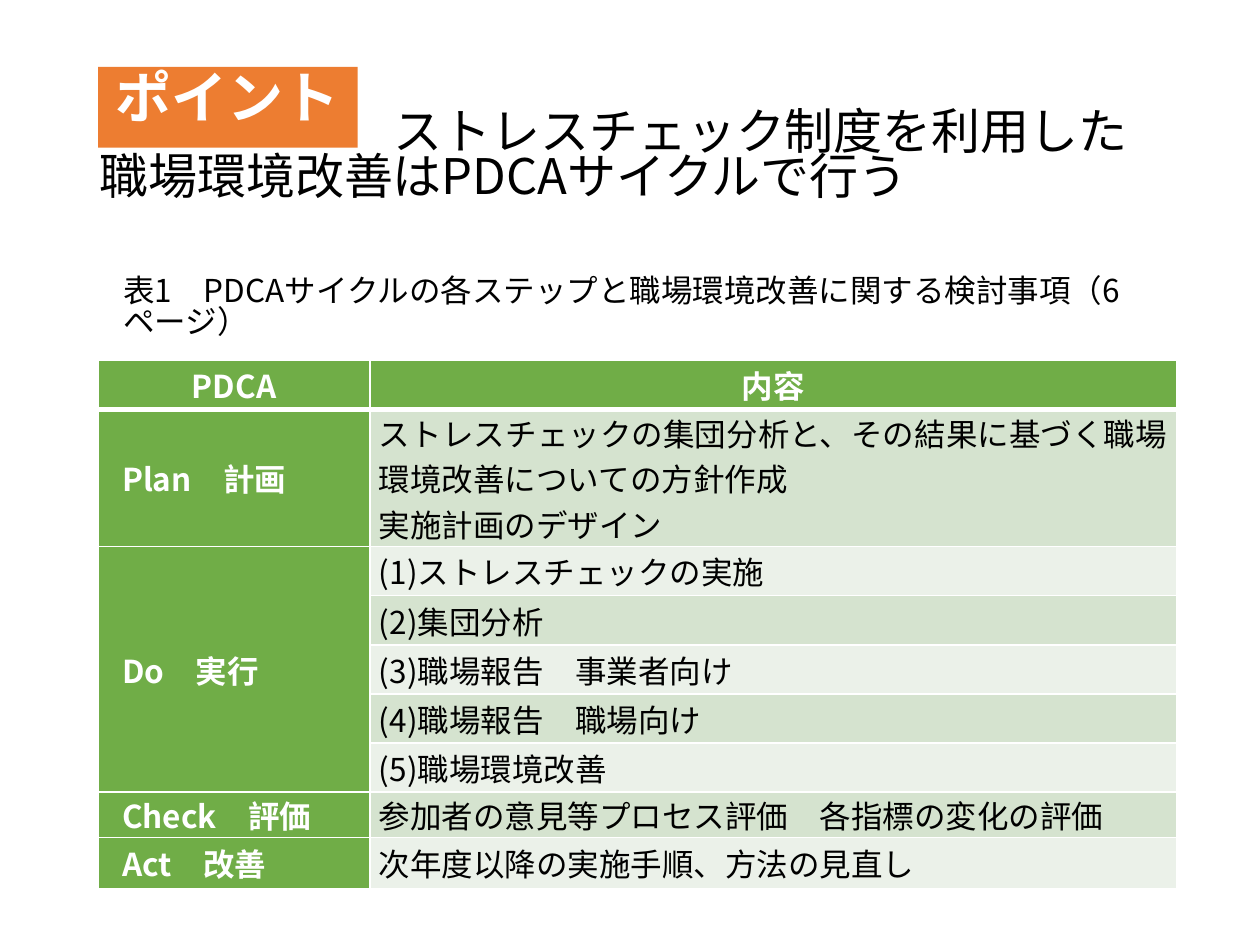
from dataclasses import dataclass

from lxml import etree
from pptx import Presentation
from pptx.dml.color import RGBColor
from pptx.enum.shapes import MSO_SHAPE
from pptx.enum.text import MSO_ANCHOR, MSO_AUTO_SIZE, PP_ALIGN
from pptx.oxml.ns import qn
from pptx.util import Cm, Pt

LEFT, CENTER, JUSTIFY = PP_ALIGN.LEFT, PP_ALIGN.CENTER, PP_ALIGN.JUSTIFY
TOP, MIDDLE = MSO_ANCHOR.TOP, MSO_ANCHOR.MIDDLE
TITLE_ONLY = 5
FONT = "Noto Sans CJK JP"
BLACK, WHITE, GREEN, ORANGE = "000000", "FFFFFF", "70AD47", "ED7D31"
BANDS = ("EBF1E9", "D5E3CF")
COLUMN_WIDTHS = (5.48, 16.26)
BORDERS = {"a:lnL": 1, "a:lnR": 1, "a:lnT": 1, "a:lnB": 1}
HEADER_BORDERS = {**BORDERS, "a:lnB": 3}


@dataclass(frozen=True)
class TextStyle:
    size: float
    color: str = BLACK
    bold: bool = False
    alignment: PP_ALIGN = LEFT
    indent: float = 0
    line_spacing: float = 1


@dataclass(frozen=True)
class Step:
    label: str
    contents: tuple[str, ...]
    heights: tuple[float, ...]


TITLE = TextStyle(28, indent=5.93, line_spacing=0.76)
CAPTION = TextStyle(18, line_spacing=0.83)
BADGE = TextStyle(32, WHITE, True, CENTER, line_spacing=0.84)
HEADER = TextStyle(18, WHITE, True, CENTER)
LABEL = TextStyle(18, WHITE, True, JUSTIFY, indent=0.3)
CONTENT = TextStyle(18, alignment=JUSTIFY)

HEADINGS = ("PDCA", "内容")
STEPS = (
    Step("Plan　計画",
         ("ストレスチェックの集団分析と、その結果に基づく職場環境改善についての方針作成\n"
          "実施計画のデザイン",), (2.59,)),
    Step("Do　実行",
         ("(1)ストレスチェックの実施", "(2)集団分析", "(3)職場報告　事業者向け",
          "(4)職場報告　職場向け", "(5)職場環境改善"), (0.99,) * 5),
    Step("Check　評価", ("参加者の意見等プロセス評価　各指標の変化の評価",), (0.86,)),
    Step("Act　改善", ("次年度以降の実施手順、方法の見直し",), (1.02,)),
)


def rgb(color: str) -> RGBColor:
    return RGBColor.from_string(color)


def write_text(text_frame, text: str, style: TextStyle) -> None:
    text_frame.text = text
    for paragraph in text_frame.paragraphs:
        paragraph.alignment = style.alignment
        paragraph.line_spacing = style.line_spacing
        font = paragraph.font
        font.name, font.size, font.bold = FONT, Pt(style.size), style.bold
        font.color.rgb = rgb(style.color)
        properties = paragraph._p.get_or_add_pPr()
        properties.set("marL", "0")
        properties.set("indent", str(int(Cm(style.indent))))
        east_asian = etree.Element(qn("a:ea"), typeface=FONT)
        properties.find(qn("a:defRPr")).find(qn("a:latin")).addnext(east_asian)


def write_box(shape, text: str, style: TextStyle, anchor: MSO_ANCHOR) -> None:
    text_frame = shape.text_frame
    text_frame.word_wrap = True
    text_frame.auto_size = MSO_AUTO_SIZE.NONE
    text_frame.vertical_anchor = anchor
    write_text(text_frame, text, style)


def write_cell(cell, text: str, style: TextStyle, fill: str,
               borders: dict[str, int] = BORDERS) -> None:
    cell.margin_left = cell.margin_right = Cm(0.18)
    cell.margin_top = cell.margin_bottom = 0
    cell.vertical_anchor = MIDDLE
    properties = cell._tc.get_or_add_tcPr()
    for tag, width in borders.items():
        line = etree.SubElement(properties, qn(tag), w=str(int(Pt(width))))
        solid = etree.SubElement(line, qn("a:solidFill"))
        etree.SubElement(solid, qn("a:srgbClr"), val=WHITE)
    cell.fill.solid()
    cell.fill.fore_color.rgb = rgb(fill)
    write_text(cell.text_frame, text, style)


def add_pdca_table(slide) -> None:
    heights = [0.99] + [height for step in STEPS for height in step.heights]
    table = slide.shapes.add_table(
        len(heights), len(HEADINGS), Cm(1.98), Cm(7.27),
        Cm(sum(COLUMN_WIDTHS)), Cm(sum(heights))).table
    for column, width in zip(table.columns, COLUMN_WIDTHS):
        column.width = Cm(width)
    for row, height in zip(table.rows, heights):
        row.height = Cm(height)
    for column_index, heading in enumerate(HEADINGS):
        write_cell(table.cell(0, column_index), heading, HEADER, GREEN, HEADER_BORDERS)

    first_row = 1
    for step in STEPS:
        next_row = first_row + len(step.contents)
        label_cell = table.cell(first_row, 0)
        if next_row - first_row > 1:
            label_cell.merge(table.cell(next_row - 1, 0))
        write_cell(label_cell, step.label, LABEL, GREEN)
        for row_index, content in enumerate(step.contents, first_row):
            write_cell(table.cell(row_index, 1), content, CONTENT, BANDS[row_index % 2])
        first_row = next_row


def main() -> None:
    presentation = Presentation()
    presentation.slide_width, presentation.slide_height = Cm(25.4), Cm(19.05)
    slide = presentation.slides.add_slide(presentation.slide_layouts[TITLE_ONLY])

    title = slide.shapes.title
    title.left, title.top, title.width, title.height = Cm(1.75), Cm(1.35), Cm(21.9), Cm(3.68)
    write_box(title, "ストレスチェック制度を利用した職場環境改善はPDCAサイクルで行う", TITLE, MIDDLE)

    add_pdca_table(slide)

    caption = slide.shapes.add_textbox(Cm(2.24), Cm(5.46), Cm(21.44), Cm(1.8))
    write_box(caption, "表1　PDCAサイクルの各ステップと職場環境改善に関する検討事項（6ページ）",
              CAPTION, TOP)

    badge = slide.shapes.add_shape(MSO_SHAPE.RECTANGLE, Cm(1.98), Cm(1.35), Cm(5.23), Cm(1.63))
    badge.shadow.inherit = False
    badge.fill.solid()
    badge.fill.fore_color.rgb = rgb(ORANGE)
    badge.line.fill.background()
    write_box(badge, "ポイント", BADGE, TOP)

    presentation.save("out.pptx")


if __name__ == "__main__":
    main()
